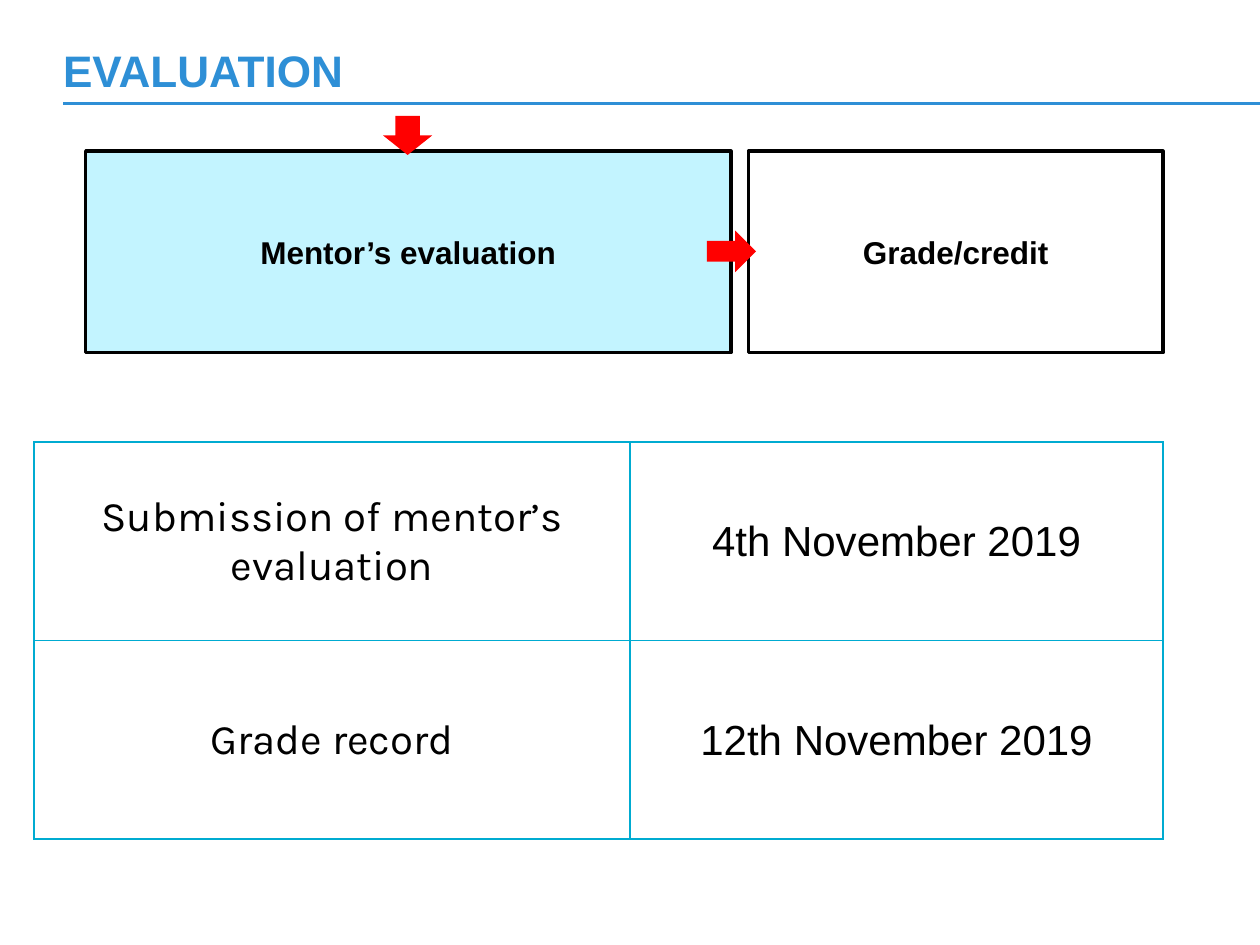
from lxml import etree
from pptx import Presentation
from pptx.dml.color import RGBColor
from pptx.enum.shapes import MSO_CONNECTOR, MSO_SHAPE
from pptx.enum.text import MSO_ANCHOR, MSO_AUTO_SIZE, PP_ALIGN
from pptx.oxml.ns import qn
from pptx.util import Inches, Pt

BLUE = RGBColor(0x2E, 0x8F, 0xD6)
CYAN = RGBColor(0x00, 0xAB, 0xD1)
PALE_CYAN = RGBColor(0xC3, 0xF4, 0xFF)
RED = RGBColor(0xFF, 0x00, 0x00)
BLACK = RGBColor(0x00, 0x00, 0x00)
WHITE = RGBColor(0xFF, 0xFF, 0xFF)

SCHEDULE = [
    ("Submission of mentor’s evaluation", "4th November 2019"),
    ("Grade record", "12th November 2019"),
]


def style_text(paragraph, font_name, size, color, bold=False, align=PP_ALIGN.CENTER):
    paragraph.alignment = align
    font = paragraph.font
    font.name, font.size, font.bold = font_name, Pt(size), bold
    font.color.rgb = color


def add_heading(slide, left, top, width, height):
    heading = slide.shapes.title
    heading.left, heading.top, heading.width, heading.height = map(
        Inches, (left, top, width, height))
    frame = heading.text_frame
    frame.text = "EVALUATION"
    frame.auto_size = MSO_AUTO_SIZE.NONE
    frame.vertical_anchor = MSO_ANCHOR.MIDDLE
    frame.margin_left = frame.margin_right = frame.margin_top = frame.margin_bottom = 0
    style_text(frame.paragraphs[0], "Arial", 25.2, BLUE, True, PP_ALIGN.LEFT)

    rule_y = Inches(0.82)
    rule = slide.shapes.add_connector(
        MSO_CONNECTOR.STRAIGHT, Inches(left), rule_y, Inches(10), rule_y)
    rule.line.color.rgb = BLUE
    rule.line.width = Pt(1.5)
    etree.SubElement(rule._element.spPr, qn("a:effectLst"))


def add_block(slide, preset, left, top, width, height, fill):
    block = slide.shapes.add_shape(
        preset, Inches(left), Inches(top), Inches(width), Inches(height))
    block.shadow.inherit = False
    block.fill.solid()
    block.fill.fore_color.rgb = fill
    block.line.fill.background()
    return block


def add_step(slide, label, left, top, width, height, fill):
    step = add_block(slide, MSO_SHAPE.RECTANGLE, left, top, width, height, fill)
    step.line.color.rgb = BLACK
    step.line.width = Pt(2)
    step.text_frame.text = label
    step.text_frame.vertical_anchor = MSO_ANCHOR.MIDDLE
    style_text(step.text_frame.paragraphs[0], "Arial", 18, BLACK, True)


def add_process(slide, left, top, width, height):
    mentor_width, grade_width = 5.12, 3.29
    add_step(slide, "Mentor’s evaluation", left, top, mentor_width, height, PALE_CYAN)
    add_step(slide, "Grade/credit", left + width - grade_width, top,
             grade_width, height, WHITE)
    add_block(slide, MSO_SHAPE.RIGHT_ARROW, left + 4.93, top + 0.63, 0.39, 0.33, RED)
    add_block(slide, MSO_SHAPE.DOWN_ARROW, left + 2.36, top - 0.28, 0.39, 0.31, RED)


def add_borders(cell, color, width):
    properties = cell._tc.get_or_add_tcPr()
    for position, side in enumerate(("a:lnL", "a:lnR", "a:lnT", "a:lnB")):
        border = etree.Element(qn(side), w=str(width))
        fill = etree.SubElement(border, qn("a:solidFill"))
        etree.SubElement(fill, qn("a:srgbClr"), val=str(color))
        properties.insert(position, border)


def add_schedule(slide, left, top, width, height):
    schedule = slide.shapes.add_table(
        len(SCHEDULE), 2, Inches(left), Inches(top), Inches(width), Inches(height)).table
    schedule.first_row = schedule.horz_banding = False
    task_width = 4.73
    schedule.columns[0].width = Inches(task_width)
    schedule.columns[1].width = Inches(width - task_width)
    for row, entry in enumerate(SCHEDULE):
        for column, (wording, font_name) in enumerate(zip(entry, ("Karla", "Arial"))):
            cell = schedule.cell(row, column)
            cell.text = wording
            cell.vertical_anchor = MSO_ANCHOR.MIDDLE
            cell.margin_left = cell.margin_right = cell.margin_top = Inches(0.01)
            cell.margin_bottom = 0
            cell.fill.solid()
            cell.fill.fore_color.rgb = WHITE
            add_borders(cell, CYAN, Pt(1))
            style_text(cell.text_frame.paragraphs[0], font_name, 24, BLACK)


def main():
    deck = Presentation()
    deck.slide_width, deck.slide_height = Inches(10), Inches(7.5)
    slide = deck.slides.add_slide(deck.slide_layouts[5])
    add_heading(slide, 0.5, 0.4, 9, 0.31)
    add_process(slide, 0.68, 1.2, 8.55, 1.6)
    add_schedule(slide, 0.27, 3.51, 8.96, 3.15)
    deck.save("out.pptx")


if __name__ == "__main__":
    main()
